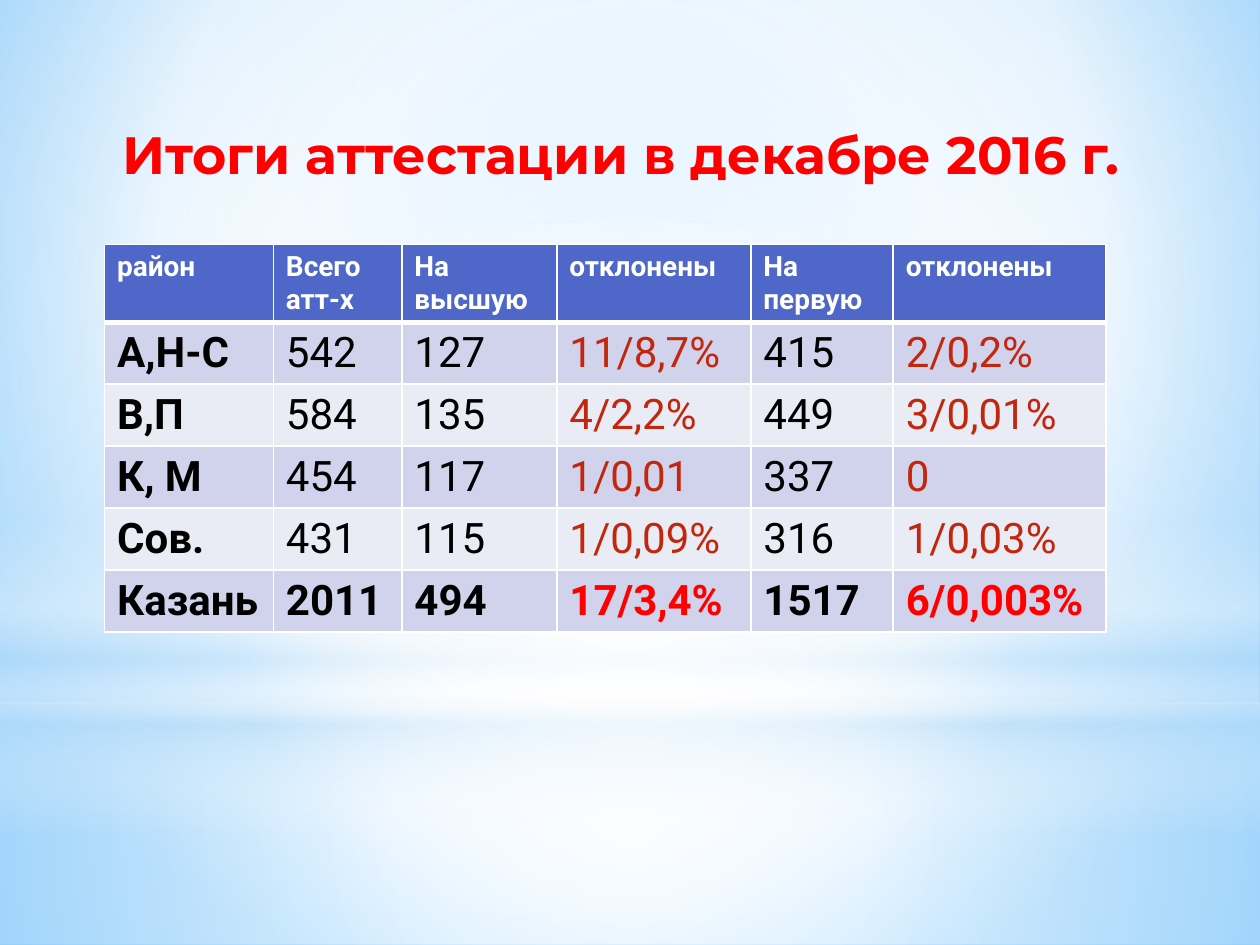
from lxml import etree
from pptx import Presentation
from pptx.dml.color import RGBColor
from pptx.enum import shapes, text
from pptx.oxml.ns import qn
from pptx.util import Inches, Pt

COLORS = {
    "white": "FFFFFF", "black": "000000", "red": "FF0000", "brick": "C3260C",
    "header": "4E67C8", "odd": "D0D3EB", "even": "E9EBF5",
    "haze": "B4DCFA", "sky": "9ED5FF", "deep": "5BB9FF",
}


def set_gradient(props, stops, focus=None):
    """Replace the solid fill in props by a gradient: radial around focus, else vertical.

    Each stop is (position %, colour name, opacity %).
    """
    grad = etree.Element(qn("a:gradFill"), rotWithShape="1")
    stop_list = etree.SubElement(grad, qn("a:gsLst"))
    for pos, name, opacity in stops:
        gs = etree.SubElement(stop_list, qn("a:gs"), pos=str(pos * 1000))
        clr = etree.SubElement(gs, qn("a:srgbClr"), val=COLORS[name])
        if opacity < 100:
            etree.SubElement(clr, qn("a:alpha"), val=str(opacity * 1000))
    if focus:
        circle = etree.SubElement(grad, qn("a:path"), path="circle")
        sides = {k: str(v * 1000) for k, v in zip("ltrb", focus)}
        etree.SubElement(circle, qn("a:fillToRect"), **sides)
    else:
        etree.SubElement(grad, qn("a:lin"), ang="5400000", scaled="0")
    props.replace(props.find(qn("a:solidFill")), grad)


def add_border(cell, side, width):
    ln = etree.SubElement(cell._tc.get_or_add_tcPr(), qn(f"a:ln{side}"),
                          w=str(Pt(width)))
    fill = etree.SubElement(ln, qn("a:solidFill"))
    etree.SubElement(fill, qn("a:srgbClr"), val=COLORS["white"])


prs = Presentation()
prs.slide_width, prs.slide_height = Inches(10), Inches(7.5)
s = prs.slides.add_slide(prs.slide_layouts[5])

# Background and its soft light
s.background.fill.solid()
set_gradient(s._element.find(".//" + qn("p:bgPr")),
             [(0, "sky", 100), (60, "white", 100), (100, "deep", 100)],
             (20, 10, 20, 60))

CENTRE = (50, 50, 50, 50)
RECT, OVAL = shapes.MSO_SHAPE.RECTANGLE, shapes.MSO_SHAPE.OVAL
glows = [
    (RECT, 5.58, 1.92, CENTRE,
     [(0, "white", 91), (37, "white", 76), (100, "haze", 79)]),
    (RECT, 0, 5.58, CENTRE,
     [(0, "white", 89), (48, "white", 62), (100, "haze", 79)]),
    (RECT, 4.12, 2.5, None,
     [(0, "white", 0), (29, "white", 30), (45, "haze", 40),
      (55, "white", 26), (65, "haze", 60), (100, "white", 0)]),
    (OVAL, 1.75, 5.58, CENTRE, [(0, "white", 100), (56, "white", 0)]),
]
title = s.shapes.title
for kind, top, height, focus, stops in glows:
    sp = s.shapes.add_shape(kind, 0, Inches(top), prs.slide_width, Inches(height))
    sp.shadow.inherit = False
    sp.line.fill.background()
    sp.fill.solid()
    set_gradient(sp._element.spPr, stops, focus)
    title._element.addprevious(sp._element)

# Title
title.left, title.top = Inches(0.43), Inches(0.92)
title.width, title.height = Inches(9), Inches(4.95)
tf = title.text_frame
tf.text = "Итоги аттестации в декабре 2016 г."
tf.word_wrap = True
tf.auto_size = text.MSO_AUTO_SIZE.NONE
tf.vertical_anchor = text.MSO_ANCHOR.TOP
p = tf.paragraphs[0]
p.alignment = text.PP_ALIGN.CENTER
p.space_after = Pt(3)
p.font.name, p.font.size, p.font.bold = "Montserrat", Pt(30), True
p.font.color.rgb = RGBColor.from_string(COLORS["red"])

# Table
rows = [
    ["район", "Всего атт-х", "На высшую", "отклонены", "На первую", "отклонены"],
    ["А,Н-С", "542", "127", "11/8,7%", "415", "2/0,2%"],
    ["В,П", "584", "135", "4/2,2%", "449", "3/0,01%"],
    ["К, М", "454", "117", "1/0,01", "337", "0"],
    ["Сов.", "431", "115", "1/0,09%", "316", "1/0,03%"],
    ["Казань", "2011", "494", "17/3,4%", "1517", "6/0,003%"],
]
widths = [1.34, 1.02, 1.23, 1.54, 1.13, 1.69]
rejected_cols = (3, 5)
last = len(rows) - 1

table = s.shapes.add_table(len(rows), len(widths), Inches(0.83), Inches(1.94),
                           Inches(sum(widths)), Inches(0.41 * len(rows))).table
for col, width in zip(table.columns, widths):
    col.width = Inches(width)

for i, row in enumerate(rows):
    for j, value in enumerate(row):
        if i == 0:
            fill, color = "header", "white"
        else:
            fill = "odd" if i % 2 else "even"
            color = "black"
            if j in rejected_cols:
                color = "red" if i == last else "brick"
        cell = table.cell(i, j)
        for side in "LRTB":
            heavy = (i, side) in ((0, "B"), (1, "T"))
            add_border(cell, side, 3 if heavy else 1)
        cell.fill.solid()
        cell.fill.fore_color.rgb = RGBColor.from_string(COLORS[fill])
        cell.text = value
        font = cell.text_frame.paragraphs[0].font
        font.name, font.size = "Roboto", Pt(24 if i else 16)
        font.bold = i in (0, last) or j == 0
        font.color.rgb = RGBColor.from_string(COLORS[color])

prs.save("out.pptx")
